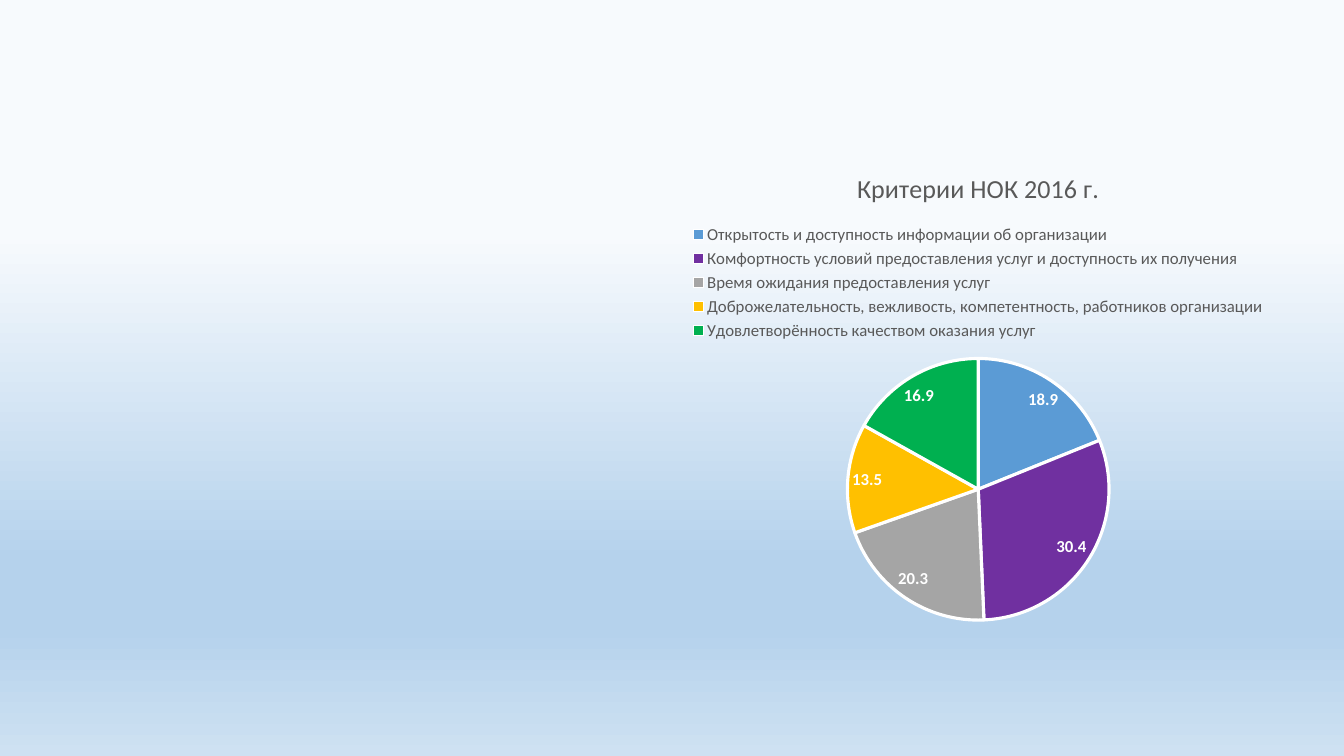
from dataclasses import dataclass

import lxml.etree
import pptx
import pptx.chart.data
import pptx.dml.color
import pptx.enum.chart
import pptx.oxml.ns
import pptx.util


@dataclass(frozen=True)
class Theme:
    font: str = "Calibri"
    text: str = "595959"
    white: str = "FFFFFF"
    slices: tuple = ("5B9BD5", "7030A0", "A5A5A5", "FFC000", "00B050")
    sky: tuple = ((31, "F7FAFD"), (74, "B5D2EC"), (83, "B5D2EC"), (100, "CEE1F2"))
    title_size: float = 18.6
    text_size: float = 12
    slice_border: float = 2.25


class SlideBuilder:
    def __init__(self, slide, theme):
        self.slide = slide
        self.theme = theme

    def color(self, value):
        return pptx.dml.color.RGBColor.from_string(value)

    def style_font(self, font, size, color, bold=False):
        font.name = self.theme.font
        font.size = pptx.util.Pt(size)
        font.bold = bold
        font.color.rgb = self.color(color)

    def background(self):
        fill = self.slide.background.fill
        fill.gradient()
        fill.gradient_angle = 270
        qn = pptx.oxml.ns.qn
        stops = next(self.slide.element.iter(qn("a:gsLst")))
        for stop in list(stops):
            stops.remove(stop)
        for percent, color in self.theme.sky:
            stop = lxml.etree.SubElement(stops, qn("a:gs"), pos=str(percent * 1000))
            lxml.etree.SubElement(stop, qn("a:srgbClr"), val=color)

    def pie(self, title, shares, left, top, width, height):
        theme = self.theme
        data = pptx.chart.data.CategoryChartData(number_format="0.0")
        data.categories = list(shares)
        data.add_series(title, list(shares.values()))
        chart = self.slide.shapes.add_chart(
            pptx.enum.chart.XL_CHART_TYPE.PIE,
            *(pptx.util.Pt(length) for length in (left, top, width, height)),
            data,
        ).chart
        self.style_font(chart.font, theme.text_size, theme.text)

        chart.has_title = True
        heading = chart.chart_title.text_frame
        heading.text = title
        self.style_font(heading.paragraphs[0].font, theme.title_size, theme.text)
        chart.chart_title.include_in_layout = False

        chart.has_legend = True
        chart.legend.position = pptx.enum.chart.XL_LEGEND_POSITION.TOP
        chart.legend.include_in_layout = False
        self.style_font(chart.legend.font, theme.text_size, theme.text)

        plot = chart.plots[0]
        plot.vary_by_categories = True
        series = plot.series[0]
        for index, color in enumerate(theme.slices):
            criterion = series.points[index].format
            criterion.fill.solid()
            criterion.fill.fore_color.rgb = self.color(color)
            criterion.line.color.rgb = self.color(theme.white)
            criterion.line.width = pptx.util.Pt(theme.slice_border)

        labels = series.data_labels
        labels.show_value = True
        labels.number_format = "0.0"
        labels.number_format_is_linked = False
        labels.position = pptx.enum.chart.XL_LABEL_POSITION.BEST_FIT
        self.style_font(labels.font, theme.text_size, theme.white, bold=True)


def main():
    presentation = pptx.Presentation()
    presentation.slide_width = pptx.util.Pt(960)
    presentation.slide_height = pptx.util.Pt(540)
    blank_layout = presentation.slide_layouts[6]
    builder = SlideBuilder(presentation.slides.add_slide(blank_layout), Theme())

    builder.background()
    criteria = {
        "Открытость и доступность информации об организации": 18.9,
        "Комфортность условий предоставления услуг и доступность их получения": 30.4,
        "Время ожидания предоставления услуг": 20.3,
        "Доброжелательность, вежливость, компетентность, работников организации": 13.5,
        "Удовлетворённость качеством оказания услуг": 16.9,
    }
    builder.pie("Критерии НОК 2016 г.", criteria, 479.5, 107.3, 438.5, 345.6)

    presentation.save("out.pptx")


if __name__ == "__main__":
    main()
